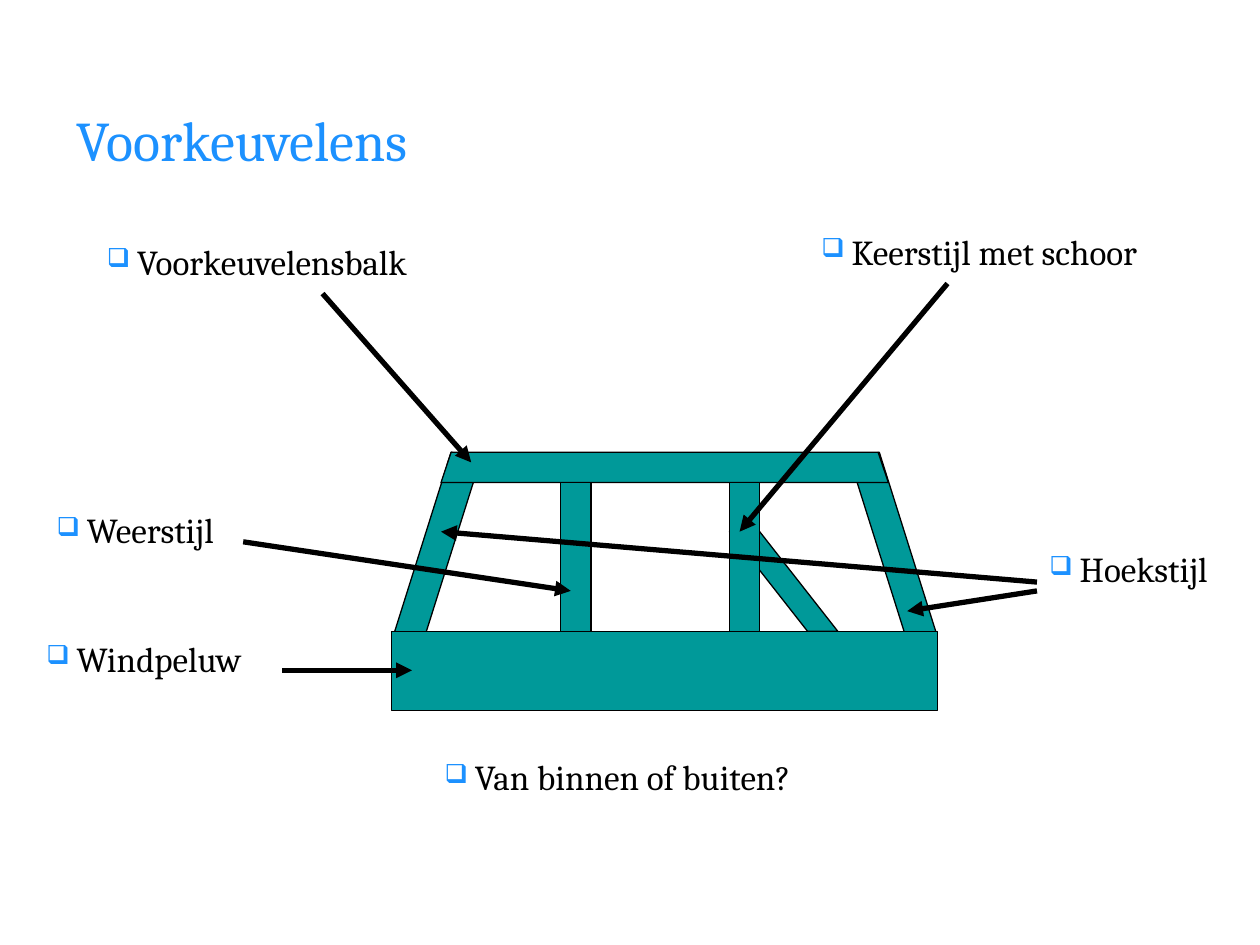
from lxml.etree import SubElement
from pptx import Presentation
from pptx.dml.color import RGBColor as Rgb
from pptx.enum.shapes import MSO_CONNECTOR as Connector, MSO_SHAPE as Preset
from pptx.enum.text import MSO_ANCHOR as Anchor
from pptx.oxml.ns import qn
from pptx.util import Inches, Pt

THEME = {
    "font": "Cambria", "title_size": 32, "label_size": 20, "outline": 0.75, "arrow": 3,
    "accent": "1C91FF", "ink": "000000", "timber": "009999",
}
TITLE = ("Voorkeuvelens", (0.51, 0.76, 8.2, 0.69))
LABELS = [
    ("Voorkeuvelensbalk", 0.75, 1.86, 3.22),
    ("Keerstijl met schoor", 6.42, 1.78, 3.35),
    ("Weerstijl", 0.35, 3.99, 1.62),
    ("Hoekstijl", 8.23, 4.3, 1.62),
    ("Windpeluw", 0.27, 5.01, 2.01),
    ("Van binnen of buiten?", 3.43, 5.95, 3.66),
]
LABEL_HEIGHT, BULLET_INDENT = 0.57, 0.24
POINTERS = [
    ((2.24, 5.32), (3.27, 5.32)),
    ((8.23, 4.62), (3.5, 4.22)),
    ((1.93, 4.3), (4.53, 4.69)),
    ((7.52, 2.25), (5.87, 4.22)),
    ((2.56, 2.33), (3.74, 3.67)),
    ((8.23, 4.69), (7.2, 4.85)),
]
POST_WIDTH, BEAM_TOP, BEAM_BOTTOM, SILL_TOP = 0.24, 3.59, 3.83, 5.01
CORNER_POSTS = [(3.35, 17.5), (6.97, -17.5)]
CORNER_LENGTH = 1.5
UPRIGHTS = [4.45, 5.79]
SILL = (3.11, SILL_TOP, 4.33, 0.63)
BEAM = [(3.5, BEAM_BOTTOM), (3.58, BEAM_TOP), (6.97, BEAM_TOP), (7.05, BEAM_BOTTOM)]
BRACE, BRACE_SLANT = (5.79, 4.22, 0.86, 0.79), 0.784


def color(key):
    return Rgb.from_string(THEME[key])


def paint(timber):
    timber.shadow.inherit = False
    timber.fill.solid()
    timber.fill.fore_color.rgb = color("timber")
    timber.line.color.rgb = color("ink")
    timber.line.width = Pt(THEME["outline"])


def add_timber(slide, preset, box, angle=0):
    timber = slide.shapes.add_shape(preset, *map(Inches, box))
    timber.rotation = angle
    paint(timber)
    return timber


def add_bullet(paragraph):
    props = paragraph._p.get_or_add_pPr()
    props.set("marL", str(Inches(BULLET_INDENT)))
    props.set("indent", str(-Inches(BULLET_INDENT)))
    SubElement(SubElement(props, qn("a:buClr")), qn("a:srgbClr"), val=THEME["accent"])
    SubElement(props, qn("a:buSzPct"), val="75000")
    SubElement(props, qn("a:buChar"), char="❑")


def add_text(slide, wording, box, size, ink, anchor=Anchor.TOP, bullet=False):
    frame = slide.shapes.add_textbox(*map(Inches, box)).text_frame
    frame.word_wrap = True
    frame.vertical_anchor = anchor
    paragraph = frame.paragraphs[0]
    if bullet:
        add_bullet(paragraph)
    run = paragraph.add_run()
    run.text = wording
    run.font.name = THEME["font"]
    run.font.size = Pt(THEME[size])
    run.font.color.rgb = color(ink)


def add_pointer(slide, start, end):
    pointer = slide.shapes.add_connector(Connector.STRAIGHT, *map(Inches, start + end))
    pointer.line.color.rgb = color("ink")
    pointer.line.width = Pt(THEME["arrow"])
    SubElement(pointer.line._get_or_add_ln(), qn("a:tailEnd"), type="triangle")
    SubElement(pointer._element.spPr, qn("a:effectLst"))


def add_frame(slide):
    brace = add_timber(slide, Preset.PARALLELOGRAM, BRACE)
    brace.adjustments[0] = BRACE_SLANT
    brace._element.spPr.xfrm.set("flipH", "1")
    for left, angle in CORNER_POSTS:
        add_timber(slide, Preset.RECTANGLE, (left, BEAM_TOP, POST_WIDTH, CORNER_LENGTH), angle)
    add_timber(slide, Preset.RECTANGLE, SILL)
    outline = slide.shapes.build_freeform(*map(Inches, BEAM[0]), scale=1.0)
    outline.add_line_segments([tuple(map(Inches, corner)) for corner in BEAM[1:]], close=True)
    paint(outline.convert_to_shape())
    for left in UPRIGHTS:
        add_timber(slide, Preset.RECTANGLE, (left, BEAM_BOTTOM, POST_WIDTH, SILL_TOP - BEAM_BOTTOM))


def main():
    """Build the slide that names the timbers of the front hood frame."""
    deck = Presentation()
    deck.slide_width, deck.slide_height = Inches(10), Inches(7.5)
    slide = deck.slides.add_slide(deck.slide_layouts[6])
    add_text(slide, *TITLE, "title_size", "accent", Anchor.MIDDLE)
    add_frame(slide)
    for start, end in POINTERS:
        add_pointer(slide, start, end)
    for wording, left, top, width in LABELS:
        add_text(slide, wording, (left, top, width, LABEL_HEIGHT), "label_size", "ink", bullet=True)
    deck.save("out.pptx")


if __name__ == "__main__":
    main()
